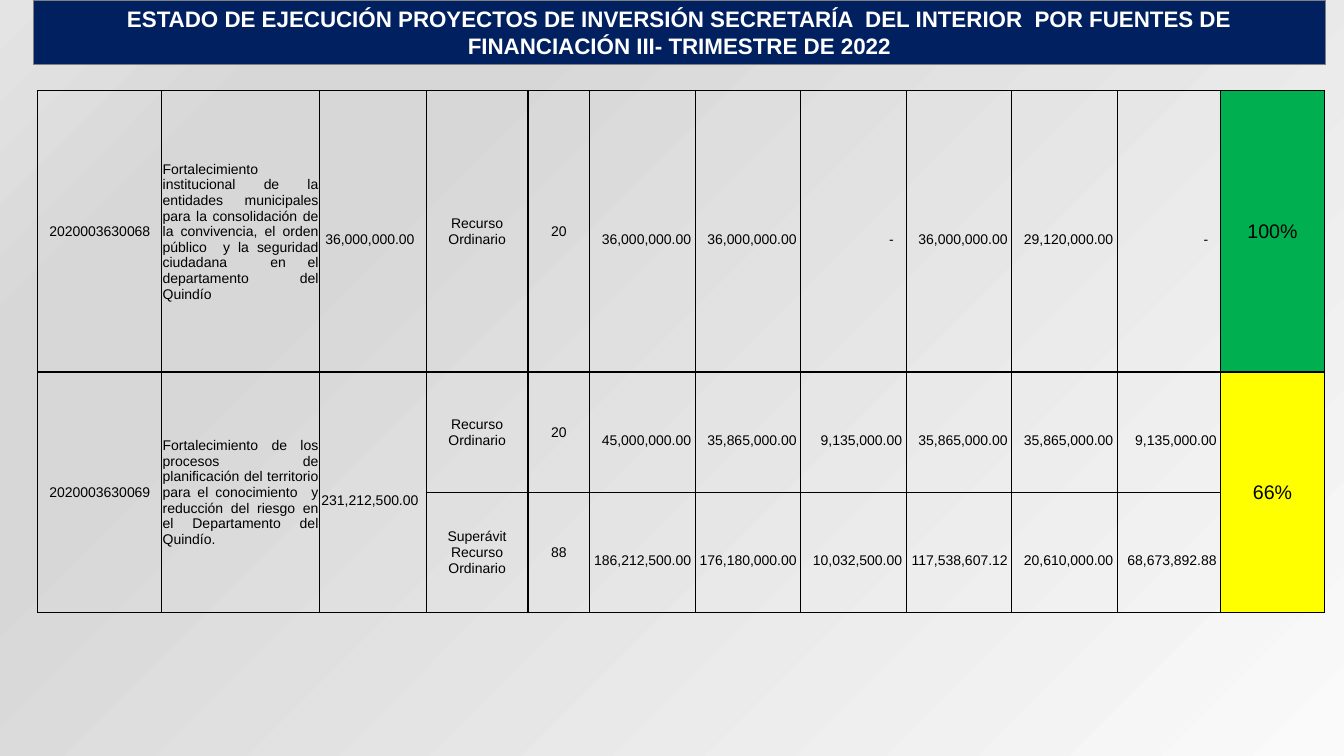
"""Build the slide on investment project execution by funding source."""
from pptx import Presentation
from pptx.dml.color import RGBColor
from pptx.enum import shapes, text
from pptx.oxml import parse_xml
from pptx.oxml.ns import nsdecls
from pptx.util import Pt

TITLE = ("ESTADO DE EJECUCIÓN PROYECTOS DE INVERSIÓN SECRETARÍA  DEL INTERIOR  "
         "POR FUENTES DE FINANCIACIÓN III- TRIMESTRE DE 2022")
ROWS = [
    ["2020003630068",
     "Fortalecimiento institucional de la entidades municipales para la consolidación de "
     "la convivencia, el orden público  y la seguridad ciudadana  en el departamento del Quindío",
     "36,000,000.00", "Recurso Ordinario", "20", "36,000,000.00", "36,000,000.00", "-",
     "36,000,000.00", "29,120,000.00", "-", "100%"],
    ["2020003630069",
     "Fortalecimiento de los procesos de planificación del territorio para el conocimiento  y "
     "reducción del riesgo en el Departamento del Quindío.",
     "231,212,500.00", "Recurso Ordinario", "20", "45,000,000.00", "35,865,000.00",
     "9,135,000.00", "35,865,000.00", "35,865,000.00", "9,135,000.00", "66%"],
    [None, None, None, "Superávit Recurso Ordinario", "88", "186,212,500.00",
     "176,180,000.00", "10,032,500.00", "117,538,607.12", "20,610,000.00",
     "68,673,892.88", None],
]
COL_WIDTHS = [88.5, 112.5, 76.4, 72.8, 44] + [75.4] * 5 + [73.9, 74.1]
ROW_HEIGHTS = [201, 85.8, 85.8]
DESCRIPTION, BUDGET, PERCENT = 1, 2, 11
AMOUNTS = range(5, 11)
BACKGROUND_STOPS = [(0, "FAFAFA"), (74, "D7D7D7"), (83, "D7D7D7"), (100, "E4E4E4")]

NAVY = RGBColor(0x00, 0x20, 0x60)
GRAY = RGBColor(0x80, 0x80, 0x80)
WHITE = RGBColor(0xFF, 0xFF, 0xFF)
BLACK = RGBColor(0x00, 0x00, 0x00)
GREEN = RGBColor(0x00, 0xB0, 0x50)
YELLOW = RGBColor(0xFF, 0xFF, 0x00)
PERCENT_FILLS = {"100%": GREEN, "66%": YELLOW}


def set_background(s):
    s.background.fill.solid()
    bg = s._element.cSld.bg.bgPr
    stops = "".join(f'<a:gs pos="{pos * 1000}"><a:srgbClr val="{color}"/></a:gs>'
                    for pos, color in BACKGROUND_STOPS)
    bg.replace(bg[0], parse_xml(
        f'<a:gradFill {nsdecls("a")} rotWithShape="1"><a:gsLst>{stops}</a:gsLst>'
        '<a:path path="circle"><a:fillToRect l="100000" t="100000"/></a:path>'
        '<a:tileRect r="-100000" b="-100000"/></a:gradFill>'))


def set_text(tf, content, size, color, align, bold=False):
    tf.word_wrap = True
    p = tf.paragraphs[0]
    p.text = content
    p.alignment = align
    p.font.name = "Arial"
    p.font.size = Pt(size)
    p.font.bold = bold
    p.font.color.rgb = color


def set_borders(cell):
    tc_pr = cell._tc.get_or_add_tcPr()
    for i, side in enumerate(("lnL", "lnR", "lnT", "lnB")):
        tc_pr.insert(i, parse_xml(
            f'<a:{side} {nsdecls("a")} w="12700"><a:solidFill>'
            f'<a:srgbClr val="{BLACK}"/></a:solidFill></a:{side}>'))


def fill_cell(cell, col, content):
    align, size = text.PP_ALIGN.CENTER, 10
    left, top, right = 0.7, 0.7, 0.7
    if col == DESCRIPTION:
        align = text.PP_ALIGN.JUSTIFY
    elif col == BUDGET:
        left, top, right = 0, 12, 4
    elif col in AMOUNTS:
        align = text.PP_ALIGN.RIGHT
        left, top, right = 0, 12, 9 if content == "-" else 3
    elif col == PERCENT:
        size = 14
    cell.margin_left, cell.margin_top = Pt(left), Pt(top)
    cell.margin_right, cell.margin_bottom = Pt(right), Pt(0)
    cell.vertical_anchor = text.MSO_ANCHOR.MIDDLE
    set_text(cell.text_frame, content, size, BLACK, align)
    if content in PERCENT_FILLS:
        cell.fill.solid()
        cell.fill.fore_color.rgb = PERCENT_FILLS[content]


def add_title(s):
    sp = s.shapes.add_shape(shapes.MSO_SHAPE.RECTANGLE, Pt(23.8), Pt(0), Pt(923), Pt(46))
    sp.shadow.inherit = False
    sp.fill.solid()
    sp.fill.fore_color.rgb = NAVY
    sp.line.color.rgb = GRAY
    sp.line.width = Pt(1)
    sp.text_frame.vertical_anchor = text.MSO_ANCHOR.MIDDLE
    set_text(sp.text_frame, TITLE, 16, WHITE, text.PP_ALIGN.CENTER, True)


def add_projects(s):
    table = s.shapes.add_table(len(ROWS), len(COL_WIDTHS), Pt(27), Pt(64.8),
                               Pt(sum(COL_WIDTHS)), Pt(sum(ROW_HEIGHTS))).table
    table.first_row = table.horz_banding = False
    for column, width in zip(table.columns, COL_WIDTHS):
        column.width = Pt(width)
    for row, height in zip(table.rows, ROW_HEIGHTS):
        row.height = Pt(height)
    for i, values in enumerate(ROWS):
        for j, content in enumerate(values):
            cell = table.cell(i, j)
            cell.fill.background()
            set_borders(cell)
            if content is None:
                table.cell(i - 1, j).merge(cell)
            else:
                fill_cell(cell, j, content)


def main():
    prs = Presentation()
    prs.slide_width, prs.slide_height = Pt(960), Pt(540)
    s = prs.slides.add_slide(prs.slide_layouts[6])
    set_background(s)
    add_title(s)
    add_projects(s)
    prs.save("out.pptx")


if __name__ == "__main__":
    main()
